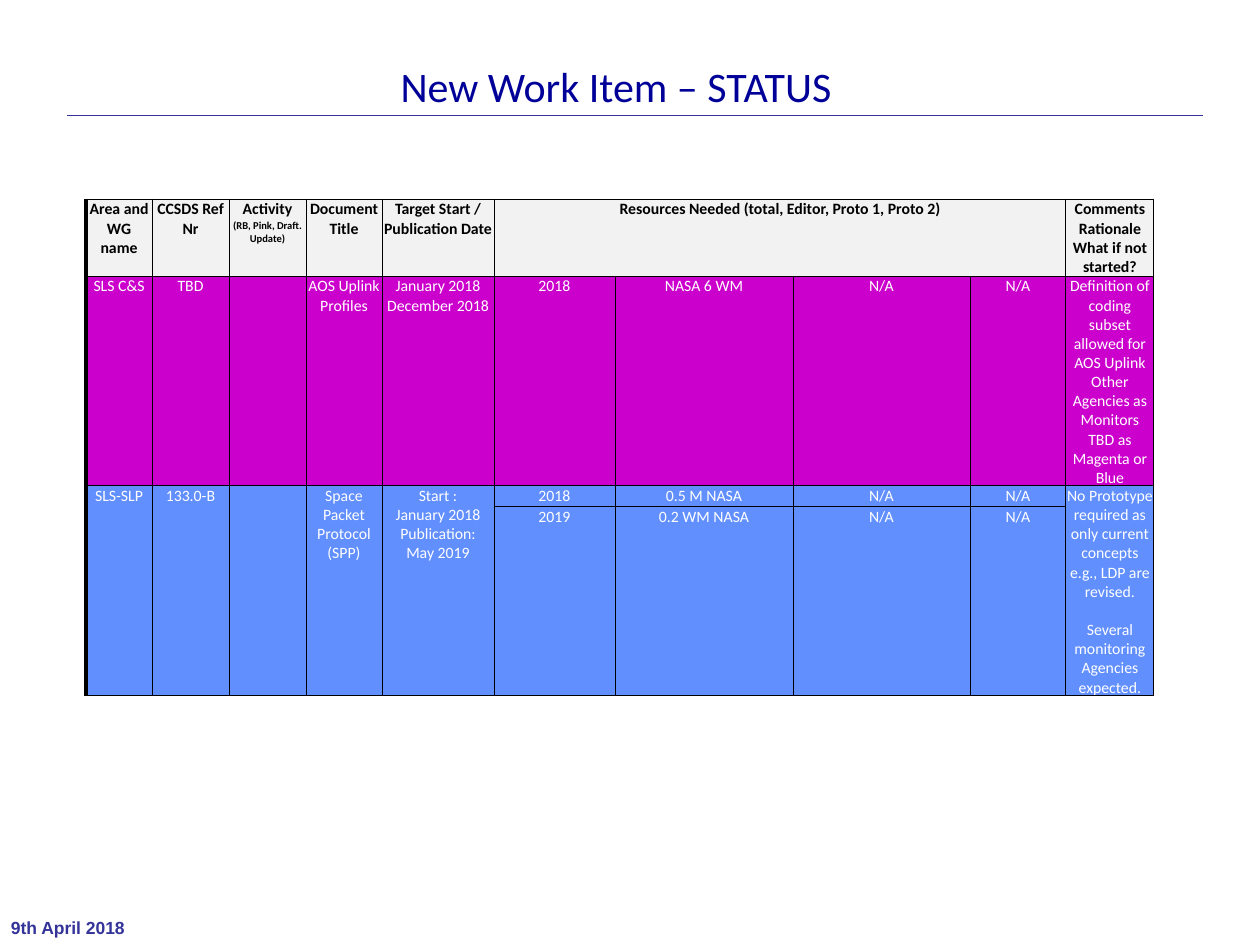
from lxml import etree
from pptx import Presentation
from pptx import util as u
from pptx.dml.color import RGBColor
from pptx.enum import shapes, text
from pptx.oxml.ns import qn

PX = 914400 / 126
HUE = {"title": "000099", "navy": "333399", "ink": "000000", "pale": "FFFFFF",
       "head": "F2F2F2", "pink": "CC00CC", "blue": "618FFD"}
MID, LEFT = text.PP_ALIGN.CENTER, text.PP_ALIGN.LEFT

COLS = [66, 77, 77, 76, 112, 121, 178, 177, 96, 88]
ROWS = [77, 209, 21, 189]
FILLS = ["head", "pink", "blue", "blue"]
CELLS = [
    ["Area and WG name", "CCSDS Ref Nr", "Activity", "Document Title",
     "Target Start / Publication Date",
     "Resources Needed (total, Editor, Proto 1, Proto 2)", "", "", "",
     "Comments\nRationale\nWhat if not started?"],
    ["SLS C&S", "TBD", "", "AOS Uplink Profiles", "January 2018\nDecember 2018",
     "2018", "NASA 6 WM", "N/A", "N/A",
     "Definition of coding subset allowed for AOS Uplink\n"
     "Other Agencies as Monitors\nTBD as Magenta or Blue"],
    ["SLS-SLP", "133.0-B", "", "Space Packet Protocol\n(SPP)",
     "Start :\nJanuary 2018\nPublication:\nMay 2019",
     "2018", "0.5 M NASA", "N/A", "N/A",
     "No Prototype required as only current concepts e.g., LDP are revised."],
    ["", "", "", "", "", "2019", "0.2 WM NASA", "N/A", "N/A", ""],
]
MERGES = [(0, 5, 0, 8)] + [(2, col, 3, col) for col in (0, 1, 2, 3, 4, 9)]


def px(n):
    return u.Emu(round(n * PX))


def tint(name):
    return RGBColor.from_string(HUE[name])


def put(frame, words, size=9, face="Calibri", hue="ink", bold=False,
        align=MID, more=False, gap=0):
    for i, line in enumerate(words.split("\n")):
        para = frame.add_paragraph() if i or more else frame.paragraphs[0]
        para.alignment = align
        para.space_before = u.Pt(0 if i else gap)
        run = para.add_run()
        run.text = line
        font = run.font
        font.size, font.name, font.bold = u.Pt(size), face, bold
        font.color.rgb = tint(hue)


def edge(cell, first):
    props = cell._tc.get_or_add_tcPr()
    for side in "LRTB":
        wide = u.Pt(2 if first and side == "L" else 0.5)
        line = etree.SubElement(props, qn("a:ln" + side), w=str(wide))
        fill = etree.SubElement(line, qn("a:solidFill"))
        etree.SubElement(fill, qn("a:srgbClr"), val=HUE["ink"])


def head(slide, x, y, w, h):
    title = slide.shapes.title
    title.left, title.top, title.width, title.height = map(px, (x, y, w, h))
    frame = title.text_frame
    frame.auto_size = text.MSO_AUTO_SIZE.NONE
    frame.vertical_anchor = text.MSO_ANCHOR.TOP
    put(frame, "New Work Item – STATUS", size=24, hue="title")


def rule(slide, x, y, w):
    line = slide.shapes.add_connector(
        shapes.MSO_CONNECTOR.STRAIGHT, px(x), px(y), px(x + w), px(y))
    line.line.color.rgb = tint("navy")
    line.line.width = u.Pt(0.13)
    etree.SubElement(line._element.spPr, qn("a:effectLst"))


def foot(slide, x, y, w, h):
    frame = slide.shapes.add_textbox(*map(px, (x, y, w, h))).text_frame
    frame.word_wrap = False
    frame.margin_left = frame.margin_right = px(11)
    frame.margin_top = frame.margin_bottom = px(5)
    put(frame, "9th April 2018", size=10, face="Arial", hue="navy",
        bold=True, align=LEFT)


def grid(slide, x, y):
    box = map(px, (x, y, sum(COLS), sum(ROWS)))
    table = slide.shapes.add_table(len(ROWS), len(COLS), *box).table
    table.first_row = table.horz_banding = False
    for col, wide in zip(table.columns, COLS):
        col.width = px(wide)
    for r, (row, tall) in enumerate(zip(table.rows, ROWS)):
        row.height = px(tall)
        for c, cell in enumerate(row.cells):
            cell.margin_left = cell.margin_right = cell.margin_top = px(1)
            cell.margin_bottom = 0
            edge(cell, c == 0)
            cell.fill.solid()
            cell.fill.fore_color.rgb = tint(FILLS[r])
            put(cell.text_frame, CELLS[r][c], bold=r == 0,
                hue="pale" if r else "ink")
    put(table.cell(0, 2).text_frame, "(RB, Pink, Draft. Update)",
        size=6, bold=True, more=True)
    put(table.cell(2, 9).text_frame, "Several monitoring Agencies expected.",
        hue="pale", more=True, gap=11)
    for top, left, low, right in MERGES:
        for r in range(top, low + 1):
            for c in range(left, right + 1):
                if (r, c) != (top, left):
                    table.cell(r, c).text_frame.clear()
        table.cell(top, left).merge(table.cell(low, right))


def main():
    deck = Presentation()
    deck.slide_width, deck.slide_height = px(1260), px(945)
    slide = deck.slides.add_slide(deck.slide_layouts[5])
    rule(slide, 67, 115, 1136)
    foot(slide, 0, 912, 139, 33)
    grid(slide, 86, 199)
    head(slide, 350, 54, 532, 63)
    deck.save("out.pptx")


if __name__ == "__main__":
    main()
